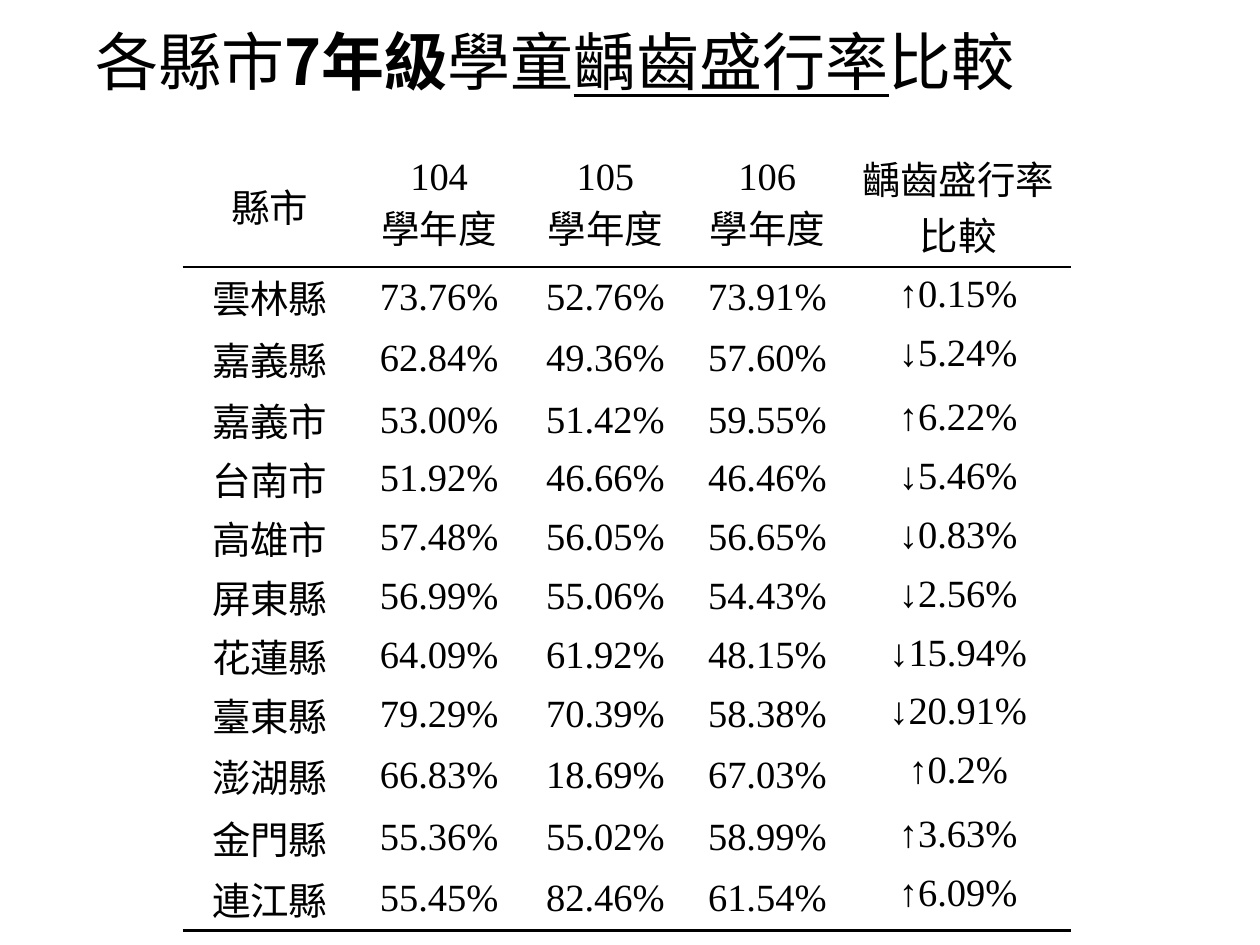
from lxml import etree
from pptx import Presentation
from pptx.dml.color import RGBColor
from pptx.enum.text import MSO_ANCHOR, PP_ALIGN
from pptx.oxml.ns import qn
from pptx.util import Inches, Pt

MIDDLE = MSO_ANCHOR.MIDDLE
TOP = MSO_ANCHOR.TOP
CENTER = PP_ALIGN.CENTER

TITLE = [
    ("各縣市", {}),
    ("7年級", {"bold": True}),
    ("學童", {}),
    ("齲齒盛行率", {"underline": True}),
    ("比較", {}),
]
HEADER = ["縣市", "104\n學年度", "105\n學年度", "106\n學年度", "齲齒盛行率\n比較"]
RATES = [
    ["雲林縣", "73.76%", "52.76%", "73.91%", "↑0.15%"],
    ["嘉義縣", "62.84%", "49.36%", "57.60%", "↓5.24%"],
    ["嘉義市", "53.00%", "51.42%", "59.55%", "↑6.22%"],
    ["台南市", "51.92%", "46.66%", "46.46%", "↓5.46%"],
    ["高雄市", "57.48%", "56.05%", "56.65%", "↓0.83%"],
    ["屏東縣", "56.99%", "55.06%", "54.43%", "↓2.56%"],
    ["花蓮縣", "64.09%", "61.92%", "48.15%", "↓15.94%"],
    ["臺東縣", "79.29%", "70.39%", "58.38%", "↓20.91%"],
    ["澎湖縣", "66.83%", "18.69%", "67.03%", "↑0.2%"],
    ["金門縣", "55.36%", "55.02%", "58.99%", "↑3.63%"],
    ["連江縣", "55.45%", "82.46%", "61.54%", "↑6.09%"],
]
COLUMN_WIDTHS = [1.38, 1.31, 1.33, 1.24, 1.79]
ROW_HEIGHTS = [0.98, 0.46, 0.51, 0.46, 0.46, 0.46, 0.46, 0.46, 0.46, 0.51, 0.46, 0.51]


def color(value):
    return RGBColor.from_string(value)


class SlideBuilder:
    CJK_FONT = "Noto Sans CJK SC"
    TABLE_FONT = "Times New Roman"
    INK = "000000"
    PAPER = "FFFFFF"

    def __init__(self, page):
        self.page = page

    def add_span(self, para, text, size, font, bold=False, underline=False):
        span = para.add_run()
        span.text = text
        span.font.size = Pt(size)
        span.font.bold = bold
        span.font.underline = underline
        span.font.color.rgb = color(self.INK)
        span.font.name = font
        east_asian = etree.SubElement(span.font._element, qn("a:ea"))
        east_asian.set("typeface", self.CJK_FONT)

    def add_title(self, spans, left, top, width, height):
        box = self.page.shapes.add_textbox(
            Inches(left), Inches(top), Inches(width), Inches(height))
        frame = box.text_frame
        frame.word_wrap = True
        frame.vertical_anchor = MIDDLE
        para = frame.paragraphs[0]
        para.line_spacing = 0.9
        for text, style in spans:
            self.add_span(para, text, 36, self.CJK_FONT, **style)

    def set_borders(self, cell, ruled_sides):
        properties = cell._tc.get_or_add_tcPr()
        for index, side in enumerate(("lnL", "lnR", "lnT", "lnB")):
            line = etree.Element(qn(f"a:{side}"))
            if side in ruled_sides:
                line.set("w", str(Pt(1.5)))
                fill = etree.SubElement(line, qn("a:solidFill"))
                etree.SubElement(fill, qn("a:srgbClr"), val=self.INK)
            else:
                etree.SubElement(line, qn("a:noFill"))
            properties.insert(index, line)

    def fill_cell(self, cell, text):
        cell.fill.solid()
        cell.fill.fore_color.rgb = color(self.PAPER)
        frame = cell.text_frame
        for index, line in enumerate(text.split("\n")):
            para = frame.add_paragraph() if index else frame.paragraphs[0]
            para.alignment = CENTER
            self.add_span(para, line, 22, self.TABLE_FONT)

    def add_table(self, rows, left, top, widths, heights):
        table = self.page.shapes.add_table(
            len(rows), len(widths), Inches(left), Inches(top),
            Inches(sum(widths)), Inches(sum(heights))).table
        table.first_row = False
        table.horz_banding = False
        for column, width in zip(table.columns, widths):
            column.width = Inches(width)
        for row, height in zip(table.rows, heights):
            row.height = Inches(height)

        last_column = len(widths) - 1
        # Rules below the header and below the last row
        ruled_sides = {0: ["lnB"], 1: ["lnT"], len(rows) - 1: ["lnB"]}
        for row_index, values in enumerate(rows):
            for column_index, text in enumerate(values):
                cell = table.cell(row_index, column_index)
                self.fill_cell(cell, text)
                is_change = column_index == last_column
                cell.vertical_anchor = TOP if is_change else MIDDLE
                # Body cells sit tight, except in the change column
                if row_index and not is_change:
                    cell.margin_left = cell.margin_right = Inches(0.01)
                    cell.margin_top = Inches(0.01)
                    cell.margin_bottom = 0
                self.set_borders(cell, ruled_sides.get(row_index, []))


def main():
    deck = Presentation()
    deck.slide_width = Inches(10)
    deck.slide_height = Inches(7.5)
    builder = SlideBuilder(deck.slides.add_slide(deck.slide_layouts[6]))

    # Title
    builder.add_title(TITLE, 0.66, 0, 8.62, 1.04)

    # Prevalence by county and school year
    builder.add_table([HEADER] + RATES, 1.45, 1.14, COLUMN_WIDTHS, ROW_HEIGHTS)

    deck.save("out.pptx")


if __name__ == "__main__":
    main()
